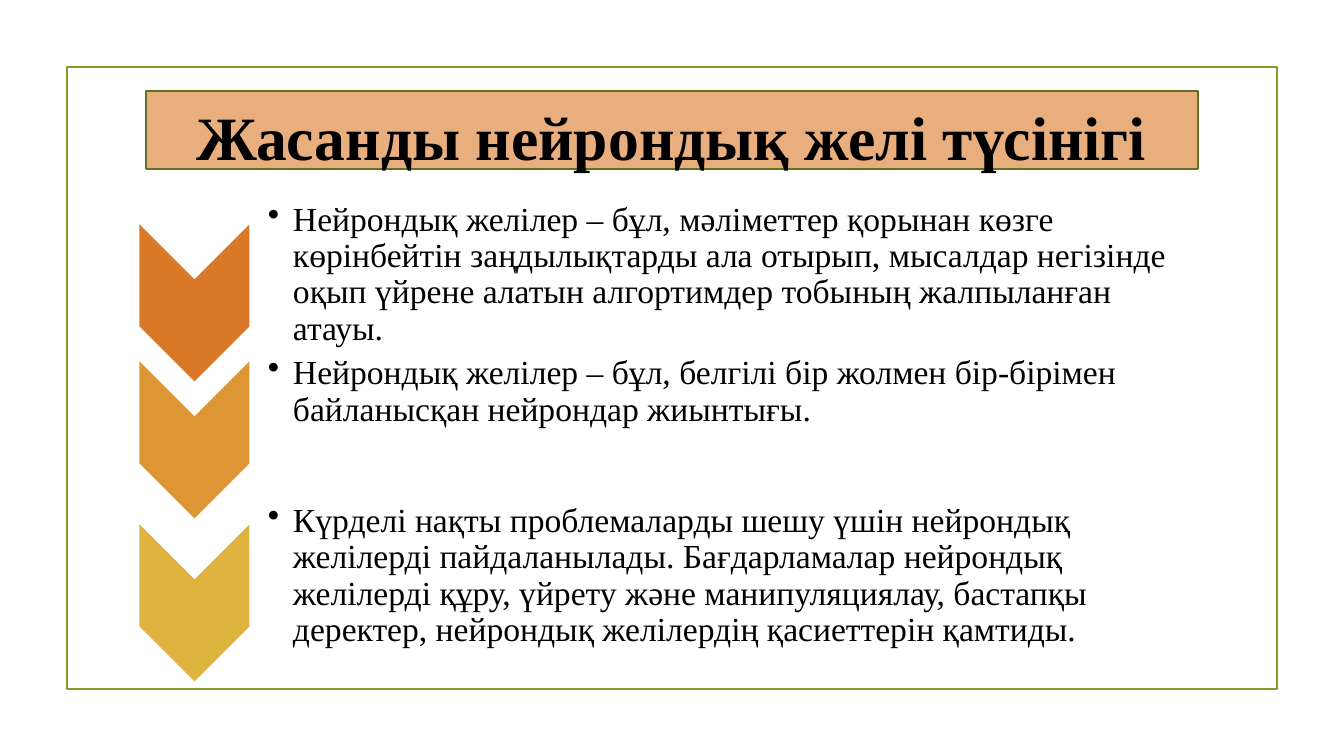
from lxml import etree
from pptx import Presentation
from pptx.dml.color import RGBColor
from pptx.enum.shapes import MSO_SHAPE as Shape
from pptx.enum.text import MSO_ANCHOR as Anchor, PP_ALIGN as Align
from pptx.oxml.ns import qn
from pptx.util import Emu, Pt

# Content
TITLE = "Жасанды нейрондық желі түсінігі"
# chevron top, chevron colour, text top, text height, text
STEPS = [
    (248, "D97828", 209, 132,
     "Нейрондық желілер – бұл, мәліметтер қорынан көзге көрінбейтін заңдылықтарды "
     "ала отырып, мысалдар негізінде оқып үйрене алатын алгортимдер тобының "
     "жалпыланған атауы."),
    (385, "DC9734", 346, 92,
     "Нейрондық желілер – бұл, белгілі бір жолмен бір-бірімен байланысқан "
     "нейрондар жиынтығы."),
    (548, "DEB340", 507, 138,
     "Күрделі нақты проблемаларды шешу үшін нейрондық желілерді пайдаланылады. "
     "Бағдарламалар нейрондық желілерді құру, үйрету және манипуляциялау, бастапқы "
     "деректер, нейрондық желілердің қасиеттерін қамтиды."),
]
FONT = "Times New Roman"
CHEVRON_LEFT, CHEVRON_WIDTH, CHEVRON_HEIGHT = 116, 157, 110
TEXT_LEFT, TEXT_WIDTH, INDENT = 249, 949, 25


def px(value):
    return Emu(round(value * 914400 / 100.8))


def color(value):
    return RGBColor.from_string(value)


def paint(shape, fill=None, line=None):
    if fill:
        shape.fill.solid()
        shape.fill.fore_color.rgb = color(fill)
    else:
        shape.fill.background()
    if line:
        shape.line.color.rgb = color(line)
        shape.line.width = Pt(1.25)
    else:
        shape.line.fill.background()


def add_preset(kind, left, top, width, height, **colors):
    shape = slide.shapes.add_shape(kind, px(left), px(top), px(width), px(height))
    shape.shadow.inherit = False
    paint(shape, **colors)
    return shape


def write(shape, text, size, bold=False, align=Align.LEFT, spacing=1.0,
          after=0, insets=(10, 5, 10, 5), bullet=False):
    frame = shape.text_frame
    frame.word_wrap = True
    frame.vertical_anchor = Anchor.MIDDLE
    (frame.margin_left, frame.margin_top,
     frame.margin_right, frame.margin_bottom) = map(px, insets)
    para = frame.paragraphs[0]
    para.alignment = align
    para.line_spacing = spacing
    para.space_before = Pt(0)
    para.space_after = Pt(after)
    if bullet:
        properties = para._p.get_or_add_pPr()
        properties.set("marL", str(px(INDENT)))
        properties.set("indent", str(-px(INDENT)))
        etree.SubElement(properties, qn("a:buChar"), char="•")
    span = para.add_run()
    span.text = text
    span.font.name = FONT
    span.font.size = Pt(size)
    span.font.bold = bold
    span.font.color.rgb = color("000000")


deck = Presentation()
deck.slide_width, deck.slide_height = px(1344), px(756)
slide = deck.slides.add_slide(deck.slide_layouts[5])

# Frame
add_preset(Shape.RECTANGLE, 67, 67, 1210, 622, line="83992A")

# Chevrons with their bulleted texts
for chevron_top, fill, text_top, text_height, text in STEPS:
    chevron = add_preset(Shape.CHEVRON, CHEVRON_LEFT, chevron_top,
                         CHEVRON_WIDTH, CHEVRON_HEIGHT, fill=fill)
    chevron.rotation = 90
    box = slide.shapes.add_textbox(px(TEXT_LEFT), px(text_top),
                                   px(TEXT_WIDTH), px(text_height))
    write(box, text, 24, spacing=0.9, insets=(19, 2, 2, 2), bullet=True)

# Title in a rounded banner
title = slide.shapes.title
title.left, title.top, title.width, title.height = map(px, (146, 91, 1052, 78))
outline = etree.SubElement(title._element.spPr, qn("a:prstGeom"), prst="roundRect")
etree.SubElement(outline, qn("a:avLst"))
paint(title, fill="E8AE7E", line="61711F")
write(title, TITLE, 44, bold=True, align=Align.CENTER, spacing=1.15, after=10)

deck.save("out.pptx")
